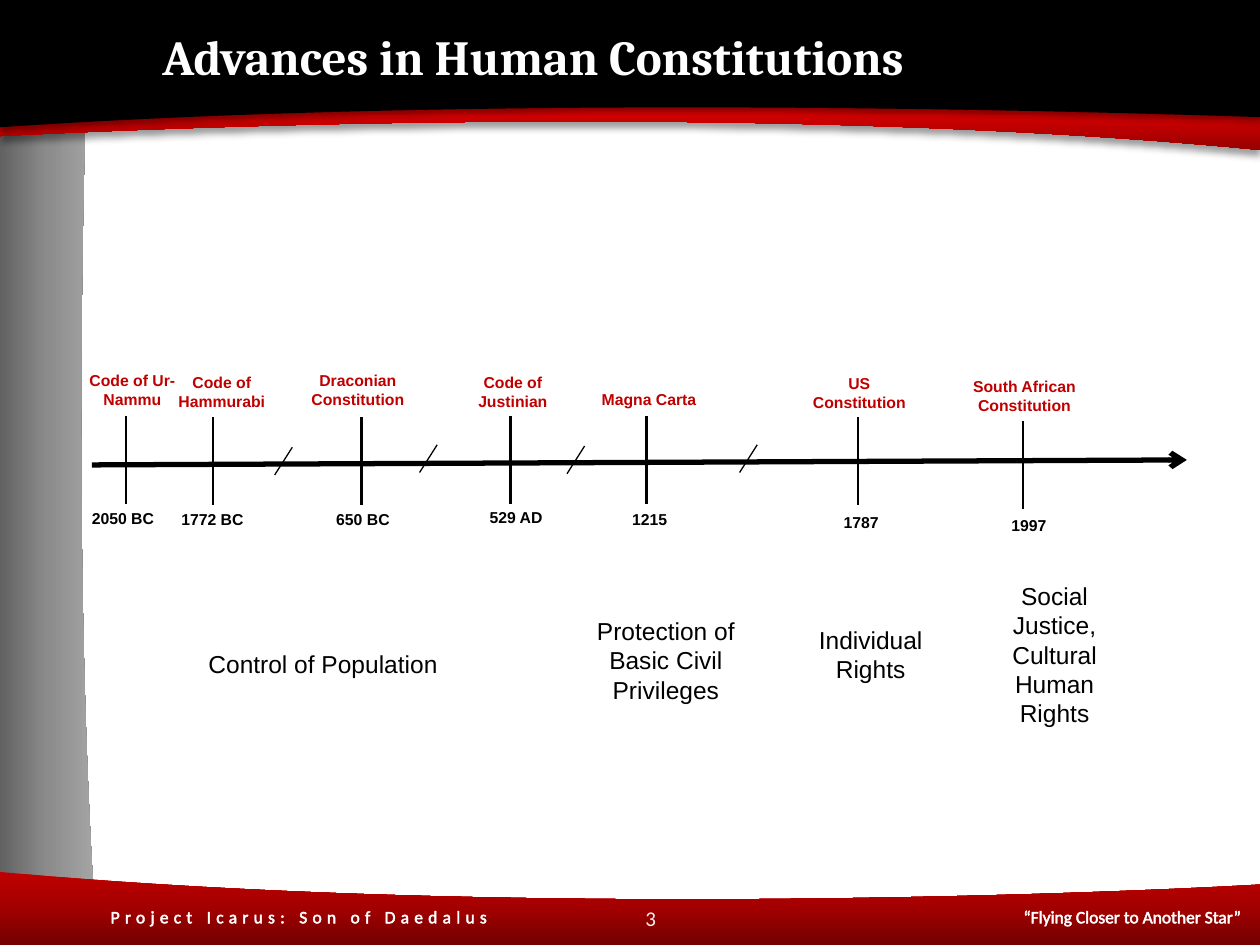
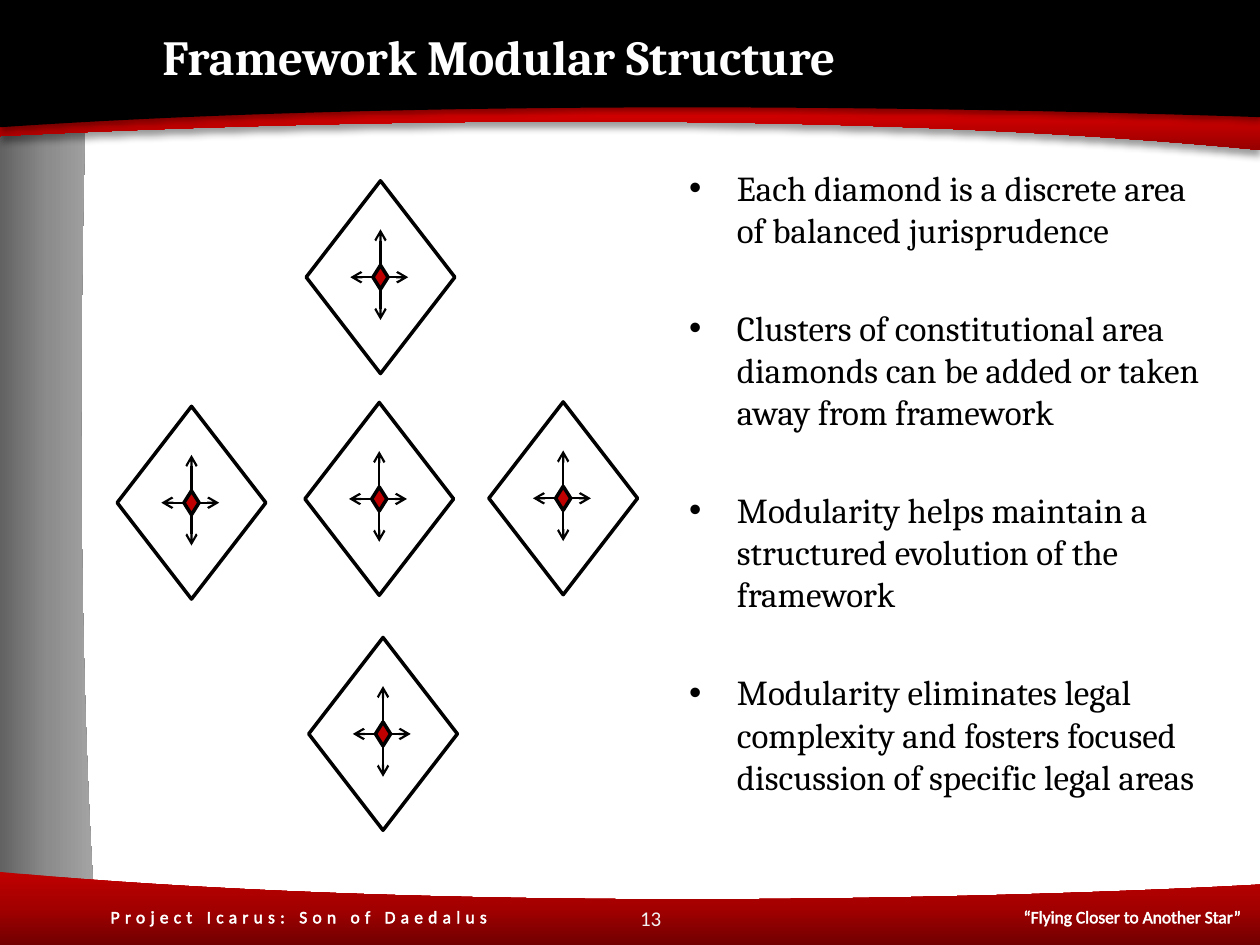
"""Build two slides on human constitutions and a modular framework."""
from copy import deepcopy

from lxml import etree
from pptx import Presentation
from pptx import util as u
from pptx.dml.color import RGBColor
from pptx.enum import shapes, text
from pptx.oxml.ns import qn

SLIDE_WIDTH, SLIDE_HEIGHT = u.Inches(10), u.Inches(7.5)
COLUMNS, ROWS = 100, 75
CELL = SLIDE_WIDTH / COLUMNS
BLACK = RGBColor(0, 0, 0)
WHITE = RGBColor(255, 255, 255)
PALE = RGBColor(0xF2, 0xF2, 0xF2)
RED = RGBColor(0xC0, 0, 0)
GREYS = [RGBColor(level, level, level) for level in (0x62, 0x8C, 0xA6)]
HEADER_REDS = [RGBColor(level, 0, 0) for level in (0xFF, 0xD7, 0x97)]
FOOTER_REDS = [RGBColor(level, 0, 0) for level in (0xC0, 0xA2, 0x72)]
RIGHTWARD, DOWNWARD = 0, 270
LEFT, CENTER = text.PP_ALIGN.LEFT, text.PP_ALIGN.CENTER
MIDDLE = text.MSO_ANCHOR.MIDDLE

NAME_WIDTH, YEAR_WIDTH, TICK_HEIGHT = 11.2, 8.1, 7
MILESTONES = [
    (10, 33, "Code of Ur-Nammu", 4.9, 32.9, "2050 BC", 6.3, 39.9, LEFT),
    (16.9, 33.1, "Code of Hammurabi", 12, 33.1, "1772 BC", 13.4, 40, LEFT),
    (28.7, 33.1, "Draconian Constitution", 22.8, 32.9, "650 BC", 25.7, 40, LEFT),
    (40.5, 33, "Code of Justinian", 35.1, 33.1, "529 AD", 36.9, 39.8, CENTER),
    (51.3, 33, "Magna Carta", 45.9, 32.9, "1215", 47.5, 40, CENTER),
    (68.1, 33.1, "US Constitution", 62.6, 33.2, "1787", 64.3, 40.2, CENTER),
    (81.2, 33.4, "South African Constitution", 75.7, 33.4, "1997", 77.6, 40.4, CENTER),
]
BREAKS = [(22.5, 36.6), (34, 36.4), (45.7, 36.5), (59.4, 36.4)]
PURPOSES = [
    ("Control of Population", 11.8, 51, 27.7, 3.4),
    ("Protection of Basic Civil Privileges", 46.1, 48.4, 13.5, 8.1),
    ("Individual Rights", 62.35, 49.1, 13.5, 5.7),
    ("Social Justice, Cultural Human Rights", 76.95, 45.6, 13.5, 12.8),
]
DIAMOND_CENTERS = [(15.2, 39.9), (44.7, 39.55), (30.1, 39.6), (30.2, 22), (30.4, 58.25)]
ARROW_REACH = [(0, 0, -3.8), (1, -2.4, 0), (2, 0, 3.4), (3, 2.2, 0)]
MODULE_POINTS = [
    "Each diamond is a discrete area of balanced jurisprudence",
    "Clusters of constitutional area diamonds can be added or taken away from framework",
    "Modularity helps maintain a structured evolution of the framework",
    "Modularity eliminates legal complexity and fosters focused discussion of specific legal areas",
]


def cells(*counts):
    """Turn counts of grid cells into lengths."""
    return [u.Emu(round(count * CELL)) for count in counts]


def bend_first_edge(shape):
    """Turn the first three line segments of an outline into one cubic curve."""
    path = next(shape.element.iter(qn("a:path")))
    segments = path.findall(qn("a:lnTo"))[:3]
    bend = etree.Element(qn("a:cubicBezTo"))
    segments[0].addprevious(bend)
    for segment in segments:
        bend.append(segment[0])
        path.remove(segment)


def fill_gradient(shape, colors, angle):
    """Fill a shape with an even three-stop gradient."""
    shape.fill.gradient()
    shape.fill.gradient_angle = angle
    stop_list = next(shape.element.iter(qn("a:gsLst")))
    stop_list.insert(1, deepcopy(stop_list[0]))
    for index, stop in enumerate(shape.fill.gradient_stops):
        stop.position = index / 2
        stop.color.rgb = colors[index]


def add_band(slide, edge, corners, colors, angle=DOWNWARD, shadow=None):
    """Draw a band with one curved edge and straight other sides."""
    outline = [cells(*point) for point in edge + corners]
    builder = slide.shapes.build_freeform(*outline[0], scale=1.0)
    builder.add_line_segments(outline[1:], close=True)
    shape = builder.convert_to_shape()
    bend_first_edge(shape)
    shape.shadow.inherit = False
    shape.line.fill.background()
    if len(colors) == 1:
        shape.fill.solid()
        shape.fill.fore_color.rgb = colors[0]
    else:
        fill_gradient(shape, colors, angle)
    if shadow:
        opacity, blur, distance = shadow
        effect = etree.SubElement(
            shape.element.spPr.find(qn("a:effectLst")), qn("a:outerShdw"),
            blurRad=str(u.Pt(blur)), dist=str(u.Pt(distance)),
            dir="5400000", algn="t", rotWithShape="0")
        color = etree.SubElement(effect, qn("a:srgbClr"), val=str(BLACK))
        etree.SubElement(color, qn("a:alpha"), val=str(opacity * 1000))


def style(paragraph, size, font, color=BLACK, bold=False, align=LEFT):
    """Set the font and alignment of a paragraph."""
    paragraph.alignment = align
    paragraph.font.size = u.Pt(size)
    paragraph.font.name = font
    paragraph.font.color.rgb = color
    paragraph.font.bold = bold


def add_text(slide, words, box, size, font, color=BLACK, bold=False,
             align=LEFT, anchor=text.MSO_ANCHOR.TOP):
    """Add a text box with one paragraph."""
    frame = slide.shapes.add_textbox(*cells(*box)).text_frame
    frame.word_wrap = True
    frame.vertical_anchor = anchor
    paragraph = frame.paragraphs[0]
    paragraph.text = words
    style(paragraph, size, font, color, bold, align)


def add_line(container, start, end, width, arrow=False):
    """Draw a straight black line, with an arrowhead if asked."""
    connector = container.shapes.add_connector(
        shapes.MSO_CONNECTOR.STRAIGHT, *cells(*start, *end))
    connector.line.color.rgb = BLACK
    connector.line.width = u.Pt(width)
    properties = connector.element.spPr
    if arrow:
        etree.SubElement(properties.find(qn("a:ln")), qn("a:tailEnd"), type="arrow")
    etree.SubElement(properties, qn("a:effectLst"))
    return connector


def add_diamond(group, center, width, height, color=None):
    """Draw a black-edged diamond around a centre."""
    x, y = center
    diamond = group.shapes.add_shape(
        shapes.MSO_SHAPE.DIAMOND, *cells(x - width / 2, y - height / 2, width, height))
    diamond.shadow.inherit = False
    diamond.line.color.rgb = BLACK
    diamond.line.width = u.Pt(2)
    if color is None:
        diamond.fill.background()
    else:
        diamond.fill.solid()
        diamond.fill.fore_color.rgb = color
    return diamond


def add_module(slide, center):
    """Draw a diamond whose red core sends out four arrows."""
    group = slide.shapes.add_group_shape()
    add_diamond(group, center, 11.8, 15.3)
    core = add_diamond(group, center, 1.2, 1.9, RED)
    x, y = center
    for site, across, down in ARROW_REACH:
        arrow = add_line(group, center, (x + across, y + down), 1.25, arrow=True)
        arrow.begin_connect(core, site)


def add_bullets(slide, points, box):
    """Add a bulleted list with wide gaps between its points."""
    frame = slide.shapes.add_textbox(*cells(*box)).text_frame
    frame.word_wrap = True
    indent = cells(3.8)[0]
    for index, point in enumerate(points):
        paragraph = frame.add_paragraph() if index else frame.paragraphs[0]
        paragraph.text = point
        properties = paragraph._p.get_or_add_pPr()
        properties.set("marL", str(indent))
        properties.set("indent", str(-indent))
        etree.SubElement(properties, qn("a:buFont"), typeface="Arial")
        etree.SubElement(properties, qn("a:buChar"), char="•")
        if index:
            paragraph.space_before = u.Pt(32)
        style(paragraph, 20, "Cambria")


def add_footer(slide):
    """Write the project name and, at a right tab, the motto."""
    frame = slide.shapes.add_textbox(*cells(7.8, 71.4, 92.2, 2.7)).text_frame
    frame.word_wrap = True
    paragraph = frame.paragraphs[0]
    tabs = etree.SubElement(paragraph._p.get_or_add_pPr(), qn("a:tabLst"))
    etree.SubElement(tabs, qn("a:tab"), pos=str(cells(89.7)[0]), algn="r")
    style(paragraph, 10, "Calibri", WHITE)
    for words, spacing in (("Project Icarus: Son of Daedalus", 300),
                           ("\t“Flying Closer to Another Star”", 0)):
        run = paragraph.add_run()
        run.text = words
        properties = run._r.get_or_add_rPr()
        properties.set("spc", str(spacing))
        outline = etree.SubElement(properties, qn("a:ln"), w=str(u.Pt(0.25)))
        fill = etree.SubElement(outline, qn("a:solidFill"))
        etree.SubElement(fill, qn("a:srgbClr"), val=str(WHITE))


def add_frame(slide, layout):
    """Draw the shared bands and footer and hand them to the layout."""
    add_band(slide, [(7.1, 0), (6.7, 9.3), (5.6, 45.1), (7.7, ROWS)],
             [(0, ROWS), (0, 0)], GREYS, RIGHTWARD)
    add_band(slide, [(0, 10.8), (12.1, 10.2), (60, 8), (COLUMNS, 11.9)],
             [(COLUMNS, 5.9), (0, 5.9)], HEADER_REDS, shadow=(40, 4, 3))
    add_band(slide, [(0, 10.1), (39.9, 7.4), (87.7, 8.9), (COLUMNS, 9.3)],
             [(COLUMNS, 0), (0, 0)], [BLACK], shadow=(38, 3.1, 1.6))
    add_band(slide, [(0, 69.2), (40, 72.9), (87.9, 70.9), (COLUMNS, 70.2)],
             [(COLUMNS, ROWS), (0, ROWS)], FOOTER_REDS)
    add_footer(slide)
    for shape in list(slide.shapes):
        layout.shapes.element.append(shape.element)


def add_heading(slide, title, number):
    """Write the title and the slide number."""
    add_text(slide, title, (11.9, 1.3, 83.2, 6.2), 28, "Cambria", WHITE, True, anchor=MIDDLE)
    add_text(slide, str(number), (40, 71.5, 23.3, 2.7), 12, "Calibri", PALE,
             align=CENTER, anchor=MIDDLE)


def add_milestone(slide, x, top, name, name_left, name_bottom,
                  year, year_left, year_top, year_align):
    """Draw a tick with its name above and its year below."""
    add_line(slide, (x, top), (x, top + TICK_HEIGHT), 1.5)
    add_text(slide, name, (name_left, name_bottom - 4, NAME_WIDTH, 4), 9, "Arial",
             RED, True, CENTER, text.MSO_ANCHOR.BOTTOM)
    add_text(slide, year, (year_left, year_top, YEAR_WIDTH, 2.5), 9, "Arial",
             BLACK, True, year_align)


def add_timeline(slide):
    """Draw the dated line with its breaks and the purposes below."""
    for milestone in MILESTONES:
        add_milestone(slide, *milestone)
    add_line(slide, (7.3, 36.9), (94.2, 36.5), 3, arrow=True)
    for x, y in BREAKS:
        add_line(slide, (x + 0.7, y - 1.1), (x - 0.7, y + 1.1), 0.75)
    for purpose, *box in PURPOSES:
        add_text(slide, purpose, box, 14, "Arial", align=CENTER)


def main():
    """Build and save the presentation."""
    presentation = Presentation()
    presentation.slide_width, presentation.slide_height = SLIDE_WIDTH, SLIDE_HEIGHT
    layout = presentation.slide_layouts[6]
    history, modules = [presentation.slides.add_slide(layout) for _ in range(2)]
    add_frame(history, layout)
    add_heading(history, "Advances in Human Constitutions", 3)
    add_timeline(history)
    add_heading(modules, "Framework Modular Structure", 13)
    add_bullets(modules, MODULE_POINTS, (53.7, 12.75, 43.5, 48.7))
    for center in DIAMOND_CENTERS:
        add_module(modules, center)
    presentation.save("out.pptx")


if __name__ == "__main__":
    main()
